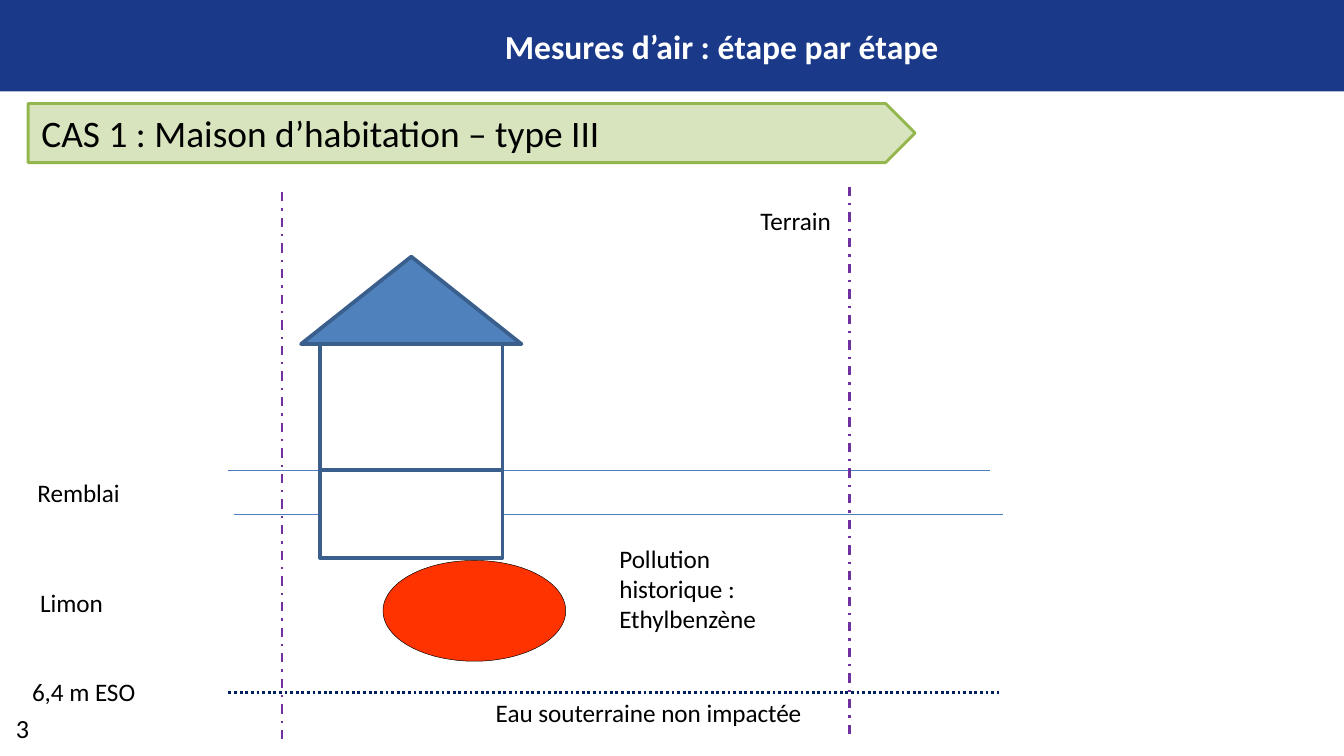
import pptx
import pptx.util
import pptx.dml.color
import pptx.enum.dml
import pptx.enum.shapes
import pptx.enum.text
import pptx.oxml.ns
import lxml.etree

Inches = pptx.util.Inches
Pt = pptx.util.Pt
RGBColor = pptx.dml.color.RGBColor
SHAPE = pptx.enum.shapes.MSO_SHAPE
DASH = pptx.enum.dml.MSO_LINE
ALIGN = pptx.enum.text.PP_ALIGN
ANCHOR = pptx.enum.text.MSO_ANCHOR

NAVY = RGBColor(0x1A, 0x39, 0x89)
WHITE = RGBColor(0xFF, 0xFF, 0xFF)
BLACK = RGBColor(0, 0, 0)
BLUE = RGBColor(0x4F, 0x81, 0xBD)
WALL = RGBColor(0x3A, 0x5F, 0x8C)
LAYER = RGBColor(0x4B, 0x7E, 0xBC)
PURPLE = RGBColor(0x70, 0x30, 0xA0)
WATER = RGBColor(0x00, 0x20, 0x60)
PALE = RGBColor(0xD7, 0xE4, 0xBD)
GREEN = RGBColor(0x94, 0xB7, 0x4D)
RED = RGBColor(0xFF, 0x33, 0x00)


def write(frame, text, size, color=BLACK, bold=False, align=ALIGN.LEFT):
    """Fill a text frame, one paragraph per line of text."""
    frame.text = text
    for para in frame.paragraphs:
        para.alignment = align
        para.font.name = "Calibri"
        para.font.size = Pt(size)
        para.font.color.rgb = color
        para.font.bold = bold


def label(slide, text, x, y, w, h=0.33, size=13.5, wrap=True):
    """Add a text box."""
    box = slide.shapes.add_textbox(Inches(x), Inches(y), Inches(w), Inches(h))
    box.text_frame.word_wrap = wrap
    write(box.text_frame, text, size)


def form(slide, kind, x, y, w, h, fill=None, edge=None, width=2):
    """Add a preset shape with a plain fill and outline."""
    shape = slide.shapes.add_shape(kind, Inches(x), Inches(y), Inches(w), Inches(h))
    shape.shadow.inherit = False
    if fill is None:
        shape.fill.background()
    else:
        shape.fill.solid()
        shape.fill.fore_color.rgb = fill
    if edge is None:
        shape.line.fill.background()
    else:
        shape.line.color.rgb = edge
        shape.line.width = Pt(width)
    return shape


def rule(slide, x, y, w, h, color, width, dash=None):
    """Add a straight line that spans w by h."""
    line = slide.shapes.add_connector(
        pptx.enum.shapes.MSO_CONNECTOR.STRAIGHT,
        Inches(x), Inches(y), Inches(x + w), Inches(y + h))
    line.line.color.rgb = color
    line.line.width = Pt(width)
    if dash is not None:
        line.line.dash_style = dash
    props = line.element.find(pptx.oxml.ns.qn("p:spPr"))
    lxml.etree.SubElement(props, pptx.oxml.ns.qn("a:effectLst"))


def header(slide, x, y, w, h):
    """Place the title on its navy band."""
    band = form(slide, SHAPE.RECTANGLE, x, y, w, h, NAVY)
    title = slide.shapes.title
    title.element.addprevious(band.element)
    title.left, title.top = Inches(x + 0.87), Inches(y + 0.14)
    title.width, title.height = Inches(w - 1), Inches(0.4)
    title.text_frame.vertical_anchor = ANCHOR.MIDDLE
    write(title.text_frame, "Mesures d’air : étape par étape", 18, WHITE, True, ALIGN.CENTER)


def banner(slide, x, y, w, h):
    """Draw the case name in an arrow."""
    arrow = form(slide, SHAPE.PENTAGON, x, y, w, h, PALE, GREEN, 1.5)
    arrow.text_frame.vertical_anchor = ANCHOR.MIDDLE
    write(arrow.text_frame, "CAS 1 : Maison d’habitation – type III", 20)


def ground(slide, x, y, w, h):
    """Draw the soil layers, the water table and their names."""
    rule(slide, x, y, w - 0.09, 0, LAYER, 0.75)
    rule(slide, x + 0.04, y + 0.33, w - 0.04, 0, LAYER, 0.75)
    rule(slide, x, y + h, w - 0.03, 0, WATER, 1.5, DASH.ROUND_DOT)
    for text, dx, dy in (("Remblai", 1.52, 0), ("Limon", 1.5, 0.82), ("6,4 m ESO", 1.56, 1.48)):
        label(slide, text, x - dx, y + dy, 1.06)
    label(slide, "Eau souterraine non impactée", x + 1.89, y + h - 0.01, 2.82)


def house(slide, x, y, w, h):
    """Draw the roof, the ground floor and the cellar."""
    roof, cellar, eave = 0.65, 0.65, 0.14
    floor = h - roof - cellar
    form(slide, SHAPE.RECTANGLE, x + eave, y + roof, w - 2 * eave, floor, None, WALL)
    form(slide, SHAPE.ISOSCELES_TRIANGLE, x, y, w, roof, BLUE, WALL)
    form(slide, SHAPE.RECTANGLE, x + eave, y + h - cellar, w - 2 * eave, cellar, WHITE, WALL)


def plot(slide, x, y, w, h):
    """Draw the two limits of the plot and its name."""
    rule(slide, x, y + 0.04, 0, h, PURPLE, 1.25, DASH.DASH_DOT)
    rule(slide, x + w, y, 0, h, PURPLE, 1.25, DASH.DASH_DOT)
    label(slide, "Terrain", x + w - 0.76, y + 0.09, 1.06)


def spill(slide, x, y, w, h):
    """Draw the polluted zone and its note."""
    form(slide, SHAPE.OVAL, x, y, w, h, RED, BLACK, 0.25)
    label(slide, "Pollution historique :\nEthylbenzène", x + w + 0.3, y - 0.18, 1.39, 0.78)


def main():
    """Build and save the slide."""
    deck = pptx.Presentation()
    deck.slide_width = Inches(10)
    deck.slide_height = deck.slide_width * 9 // 16
    slide = deck.slides.add_slide(deck.slide_layouts.get_by_name("Title Only"))
    header(slide, 0, 0, 10, 0.68)
    banner(slide, 0.21, 0.77, 6.6, 0.44)
    ground(slide, 1.7, 3.5, 5.76, 1.65)
    house(slide, 2.24, 1.91, 1.64, 2.24)
    plot(slide, 2.1, 1.39, 4.22, 4.08)
    spill(slide, 2.85, 4.17, 1.36, 0.75)
    label(slide, "3", 0.02, 5.25, 0.53, 0.34, 14, False)
    deck.save("out.pptx")


if __name__ == "__main__":
    main()
